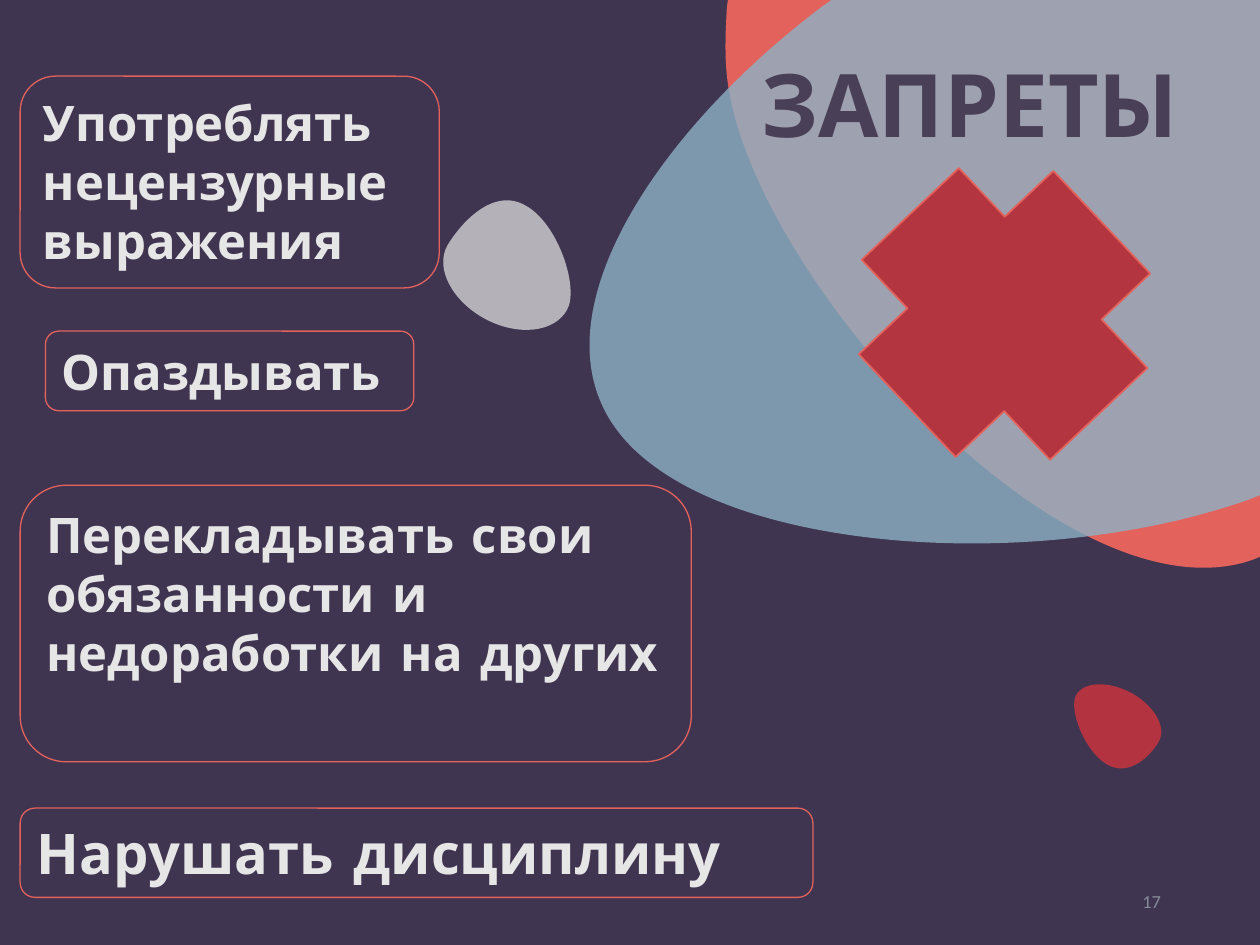
import pptx
import pptx.dml.color
import pptx.enum.shapes
import pptx.enum.text
import pptx.oxml
import pptx.oxml.ns
import pptx.util
from dataclasses import dataclass

Pt = pptx.util.Pt
Shapes = pptx.enum.shapes.MSO_SHAPE
Align = pptx.enum.text.PP_ALIGN
Anchor = pptx.enum.text.MSO_ANCHOR


@dataclass(frozen=True)
class Theme:
    background: str = "403551"
    coral: str = "E4625C"
    blue: str = "8DB1C4"
    light: str = "E7E6E6"
    red: str = "D0343C"
    cross: str = "B33540"
    title: str = "493F57"
    muted: str = "848B98"
    heading_font: str = "Comic Neue"
    number_font: str = "Calibri"
    title_size: float = 50
    large_size: float = 32
    body_size: float = 28
    number_size: float = 10.5


THEME = Theme()

BLOBS = [
    ((415, 0, 305, 324.5), THEME.coral, 100,
     [(1, 0), (305, 0), (305, 318.2), (301.4, 319.7)],
     [((295.6, 321.8), (289.2, 323.3), (282, 324)),
      ((173.2, 334.8), (11.2, 148.3), (0.4, 43.2)),
      ((-1, 29.5), (-0.3, 16.6), (0.4, 4.3))]),
    ((337, 0, 383, 311), THEME.blue, 80,
     [(138.2, 0), (383, 0), (383, 283), (375.8, 285.8)],
     [((350.6, 294.5), (326.1, 300.2), (303.1, 303.8)),
      ((183.6, 323.3), (38.8, 301), (7.2, 231.8)),
      ((-23.1, 167), (44.6, 69.8), (133.9, 2.9))]),
    ((253, 114, 73, 74), THEME.light, 70,
     [(71, 63.1)],
     [((78.2, 50.9), (66, 13.4), (47.2, 3.4)),
      ((28.5, -7.4), (9.8, 14.2), (2.6, 26.4)),
      ((-4.6, 39.4), (5.5, 58.1), (24.2, 68.2)),
      ((42.9, 78.2), (63.8, 76.1), (71, 63.1))]),
    ((613, 391, 50.5, 47.5), THEME.red, 80,
     [(1.9, 6.4)],
     [((-2.4, 14.4), (6.9, 38.8), (19.9, 46)),
      ((32.8, 53.2), (45.1, 40.3), (49.4, 32.4)),
      ((53.7, 24.4), (46.5, 12.2), (33.6, 5)),
      ((19.9, -2.2), (6.2, -1.5), (1.9, 6.4))]),
]

BANS = [
    ((11.5, 43.5, 239.5, 121), "Употреблять нецензурные выражения", THEME.body_size, True),
    ((11.5, 277.3, 383.5, 158), "Перекладывать свои обязанности и недоработки на других",
     THEME.body_size, True),
    ((11.5, 461.8, 453, 51), "Нарушать дисциплину", THEME.large_size, True),
    ((26, 189.2, 210.5, 45.5), "Опаздывать", THEME.body_size, False),
]


def rgb(value):
    return pptx.dml.color.RGBColor.from_string(value)


def lengths(box):
    return [Pt(value) for value in box]


def paint(shape, fill=None, opacity=100, line=None, width=0.75):
    shape.shadow.inherit = False
    if fill:
        shape.fill.solid()
        shape.fill.fore_color.rgb = rgb(fill)
    else:
        shape.fill.background()
    if opacity < 100:
        color = shape.fill._xPr.find(".//" + pptx.oxml.ns.qn("a:srgbClr"))
        alpha = pptx.oxml.parse_xml(
            f'<a:alpha {pptx.oxml.ns.nsdecls("a")} val="{opacity * 1000}"/>')
        color.append(alpha)
    if line:
        shape.line.color.rgb = rgb(line)
        shape.line.width = Pt(width)
    else:
        shape.line.fill.background()


def write_text(shape, text, *, size, color, font=THEME.heading_font, bold=True,
               align=Align.LEFT, anchor=Anchor.TOP, wrap=True):
    frame = shape.text_frame
    frame.word_wrap = wrap
    frame.auto_size = pptx.enum.text.MSO_AUTO_SIZE.NONE
    frame.vertical_anchor = anchor
    paragraph = frame.paragraphs[0]
    paragraph.alignment = align
    run = paragraph.add_run()
    run.text = text
    run.font.name = font
    run.font.size = Pt(size)
    run.font.bold = bold
    run.font.color.rgb = rgb(color)


def path_step(tag, *points):
    places = "".join(f'<a:pt x="{Pt(x)}" y="{Pt(y)}"/>' for x, y in points)
    return f"<a:{tag}>{places}</a:{tag}>"


def add_blob(slide, box, fill, opacity, corners, curves):
    left, top, width, height = lengths(box)
    right, bottom = left + width, top + height
    builder = slide.shapes.build_freeform(left, top, scale=1.0)
    builder.add_line_segments([(right, top), (right, bottom), (left, bottom)])
    shape = builder.convert_to_shape()
    steps = [path_step("moveTo", corners[0])]
    steps += [path_step("lnTo", corner) for corner in corners[1:]]
    steps += [path_step("cubicBezTo", *curve) for curve in curves]
    outline = pptx.oxml.parse_xml(
        f'<a:path {pptx.oxml.ns.nsdecls("a")} w="{width}" h="{height}">'
        f'{"".join(steps)}<a:close/></a:path>')
    straight = shape._element.find(".//" + pptx.oxml.ns.qn("a:path"))
    straight.getparent().replace(straight, outline)
    paint(shape, fill, opacity)


def add_ban(slide, box, text, size, wrap):
    shape = slide.shapes.add_shape(Shapes.ROUNDED_RECTANGLE, *lengths(box))
    paint(shape, line=THEME.coral)
    write_text(shape, text, size=size, color=THEME.light, wrap=wrap)


def add_title(slide, box):
    title = slide.shapes.add_textbox(*lengths(box))
    write_text(title, "ЗАПРЕТЫ", size=THEME.title_size, color=THEME.title, wrap=False)


def add_cross(slide, box):
    cross = slide.shapes.add_shape(Shapes.CROSS, *lengths(box))
    cross.rotation = 46.7
    paint(cross, THEME.cross, line=THEME.coral, width=1)


def add_page_number(slide, box):
    number = slide.shapes.add_textbox(*lengths(box))
    write_text(number, "17", size=THEME.number_size, color=THEME.muted,
               font=THEME.number_font, bold=False, align=Align.RIGHT,
               anchor=Anchor.MIDDLE)


def main():
    presentation = pptx.Presentation()
    presentation.slide_width, presentation.slide_height = Pt(720), Pt(540)
    slide = presentation.slides.add_slide(presentation.slide_layouts[6])
    slide.background.fill.solid()
    slide.background.fill.fore_color.rgb = rgb(THEME.background)
    for blob in BLOBS:
        add_blob(slide, *blob)
    add_page_number(slide, (508.5, 500.5, 162, 28.75))
    first_ban, *middle_bans, last_ban = BANS
    add_ban(slide, *first_ban)
    add_title(slide, (428.3, 24.8, 291.5, 67.7))
    for ban in middle_bans:
        add_ban(slide, *ban)
    add_cross(slide, (495.5, 103, 157, 152.75))
    add_ban(slide, *last_ban)
    presentation.save("out.pptx")


if __name__ == "__main__":
    main()
